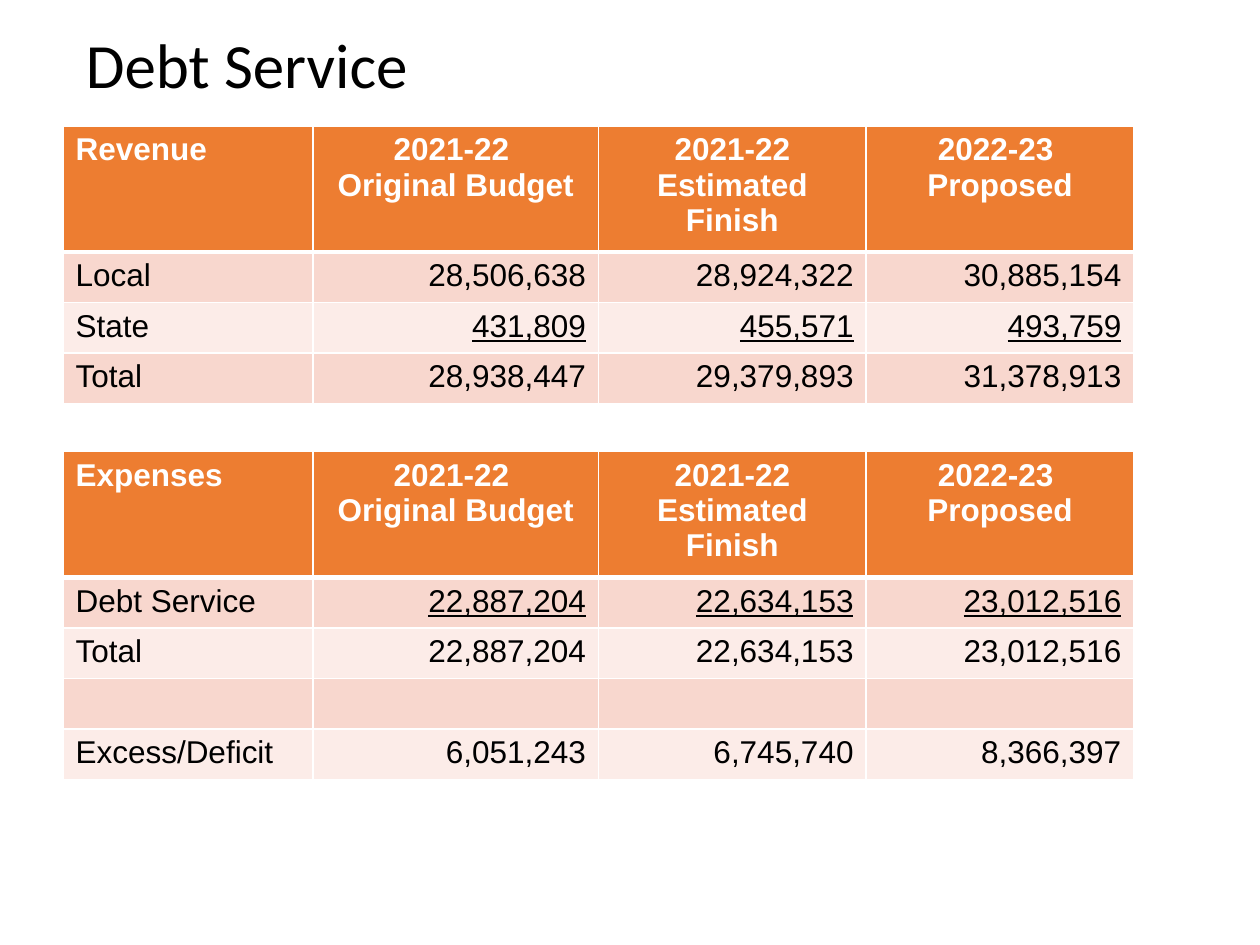
import dataclasses

import pptx
import pptx.util
import pptx.dml.color
import pptx.enum.text
import pptx.oxml
import pptx.oxml.ns
from lxml import etree

Pt = pptx.util.Pt
Align = pptx.enum.text.PP_ALIGN
Color = pptx.dml.color.RGBColor.from_string


@dataclasses.dataclass
class Theme:
    head: str = "ED7D31"
    odd: str = "F8D7CE"
    even: str = "FCECE8"
    white: str = "FFFFFF"
    black: str = "000000"
    title: float = 36
    body: float = 18


theme = Theme()


def write(frame, text, size=theme.body, font="Arial", color=theme.black,
          bold=False, line=False, align=Align.LEFT, space=None):
    """Fill a text frame, one paragraph for each line of text."""
    for i, part in enumerate(text.split("\n")):
        para = frame.add_paragraph() if i else frame.paragraphs[0]
        para.alignment = align
        para.line_spacing = space
        run = para.add_run()
        run.text = part
        run.font.size = Pt(size)
        run.font.name = font
        run.font.color.rgb = Color(color)
        run.font.bold = bold
        run.font.underline = line


def edge(cell, side, width):
    """Draw one white border; call before the cell is filled."""
    props = cell._tc.get_or_add_tcPr()
    line = etree.SubElement(props, pptx.oxml.ns.qn("a:ln" + side), w=str(Pt(width)))
    fill = etree.SubElement(line, pptx.oxml.ns.qn("a:solidFill"))
    etree.SubElement(fill, pptx.oxml.ns.qn("a:srgbClr"), val=theme.white)


deck = pptx.Presentation()
deck.slide_width, deck.slide_height = Pt(720), Pt(540)
slide = deck.slides.add_slide(deck.slide_layouts[6])

box = slide.shapes.add_textbox(Pt(42), Pt(6), Pt(644), Pt(66))
box.text_frame.word_wrap = True
box.text_frame.vertical_anchor = pptx.enum.text.MSO_ANCHOR.MIDDLE
write(box.text_frame, "Debt Service", size=theme.title, font="Calibri", space=0.9)

years = ["2021-22 \nOriginal Budget", "2021-22 Estimated Finish", "2022-23 \nProposed"]
widths = [143, 163, 153, 153]
high, low, gap = 67.6, 27.4, 28.8  # heights of header, data and empty rows

tables = [
    (72, [
        ["Revenue", *years],
        ["Local", "28,506,638", "28,924,322", "30,885,154"],
        ["State", "431,809", "455,571", "493,759"],
        ["Total", "28,938,447", "29,379,893", "31,378,913"],
    ]),
    (258, [
        ["Expenses", *years],
        ["Debt Service", "22,887,204", "22,634,153", "23,012,516"],
        ["Total", "22,887,204", "22,634,153", "23,012,516"],
        [""] * 4,
        ["Excess/Deficit", "6,051,243", "6,745,740", "8,366,397"],
    ]),
]

for top, rows in tables:
    sizes = [high] + [low if row[0] else gap for row in rows[1:]]
    table = slide.shapes.add_table(len(rows), len(widths), Pt(36), Pt(top),
                                   Pt(sum(widths)), Pt(sum(sizes))).table
    table.first_row = table.horz_banding = False
    for col, width in zip(table.columns, widths):
        col.width = Pt(width)
    labels = [row[0] for row in rows]
    summed = labels.index("Total") - 1  # figures above a total are underlined

    for r, row in enumerate(rows):
        table.rows[r].height = Pt(sizes[r])
        head = r == 0
        for c, text in enumerate(row):
            cell = table.cell(r, c)
            for side in "LRTB":
                thick = (r, side) in ((0, "B"), (1, "T"))
                edge(cell, side, 3 if thick else 1)
            cell.fill.solid()
            shade = theme.head if head else theme.odd if r % 2 else theme.even
            cell.fill.fore_color.rgb = Color(shade)
            if text:
                side = Align.LEFT if c == 0 else Align.CENTER if head else Align.RIGHT
                write(cell.text_frame, text, bold=head, align=side,
                      color=theme.white if head else theme.black,
                      line=r == summed and c > 0)

deck.save("out.pptx")
